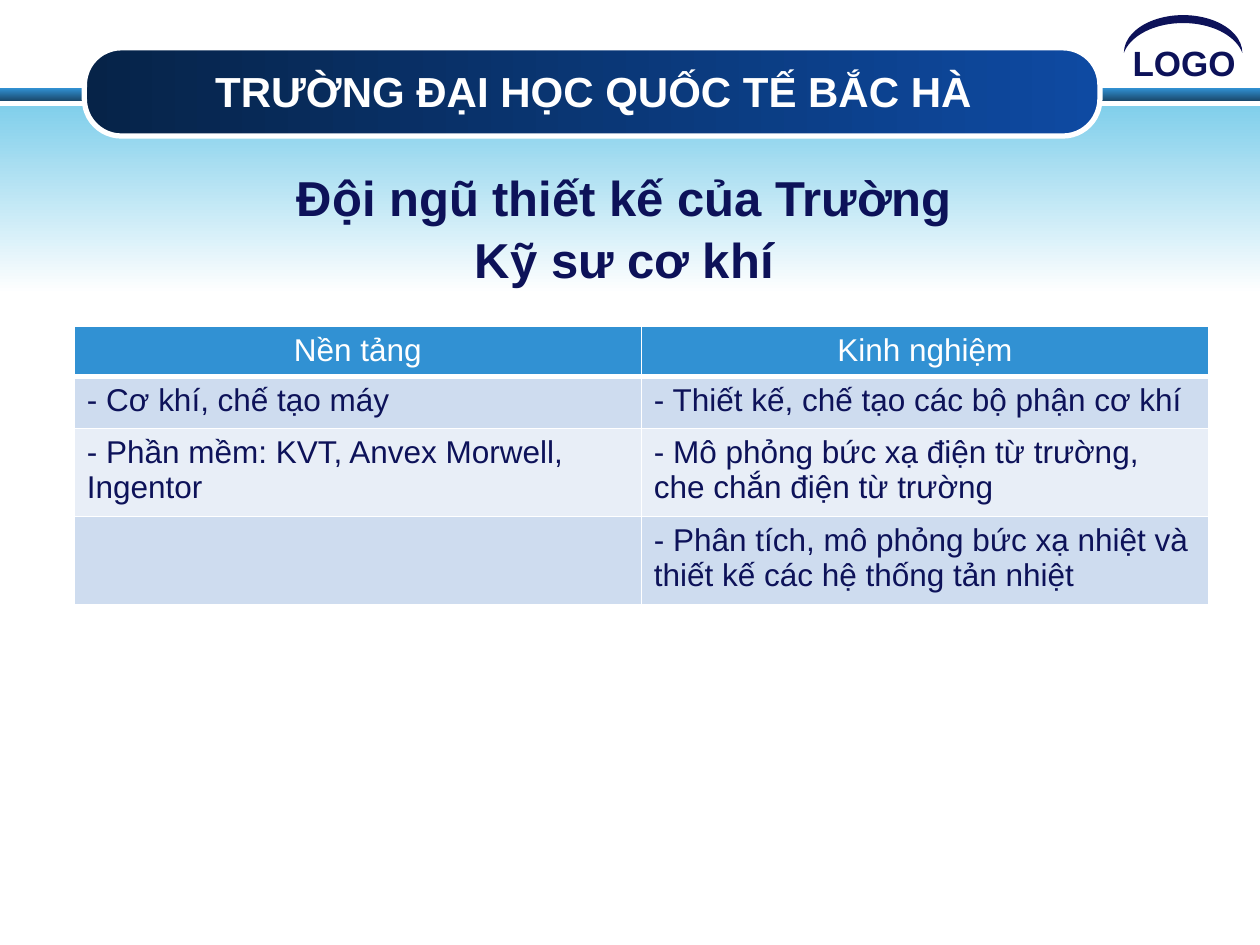
"""Build the slide presenting the mechanical engineers of the university design team."""
from dataclasses import dataclass

from lxml.etree import SubElement
from pptx import Presentation
from pptx.dml.color import RGBColor
from pptx.enum.shapes import MSO_SHAPE as Shape
from pptx.enum.text import MSO_ANCHOR as Anchor, PP_ALIGN as Align
from pptx.oxml.ns import qn
from pptx.util import Inches, Pt

FONT = "Arial"
COLORS = {
    "white": "FFFFFF",
    "navy": "0D1259",
    "blue": "3191D3",
    "bar_end": "1A4A6E",
    "sky": "81CFEB",
    "banner_start": "062348",
    "banner_end": "0E4AA2",
    "band_dark": "CEDCEF",
    "band_light": "E8EEF7",
}
DOWN, ACROSS = 270, 0


@dataclass
class Box:
    left: float
    top: float
    width: float
    height: float

    def lengths(self) -> list:
        return [Inches(side) for side in (self.left, self.top, self.width, self.height)]


@dataclass
class GradientShape:
    kind: Shape
    box: Box
    start: str
    end: str
    angle: int


@dataclass
class TextStyle:
    size: float
    color: str = "navy"
    bold: bool = True
    align: Align = Align.CENTER


BACKDROP = [
    GradientShape(Shape.RECTANGLE, Box(0, 0.7, 10, 0.1), "blue", "bar_end", DOWN),
    GradientShape(Shape.RECTANGLE, Box(0, 0.84, 10, 1.49), "sky", "white", DOWN),
]
BANNER = GradientShape(
    Shape.ROUNDED_RECTANGLE, Box(0.67, 0.38, 8.06, 0.7), "banner_start", "banner_end", ACROSS
)
TABLE_ROWS = [
    ("Nền tảng", "Kinh nghiệm"),
    ("- Cơ khí, chế tạo máy", "- Thiết kế, chế tạo các bộ phận cơ khí"),
    (
        "- Phần mềm: KVT, Anvex Morwell, Ingentor",
        "- Mô phỏng bức xạ điện từ trường, che chắn điện từ trường",
    ),
    ("", "- Phân tích, mô phỏng bức xạ nhiệt và thiết kế các hệ thống tản nhiệt"),
]
ROW_HEIGHTS = [0.4, 0.41, 0.7, 0.7]


def rgb(name: str) -> RGBColor:
    return RGBColor.from_string(COLORS[name])


def write_text(text_frame, text: str, style: TextStyle) -> None:
    paragraph = text_frame.paragraphs[0]
    paragraph.text = text
    paragraph.alignment = style.align
    for run in paragraph.runs:
        run.font.name = FONT
        run.font.size = Pt(style.size)
        run.font.bold = style.bold
        run.font.color.rgb = rgb(style.color)


def add_gradient_shape(slide, item: GradientShape):
    shape = slide.shapes.add_shape(item.kind, *item.box.lengths())
    shape.shadow.inherit = False
    shape.fill.gradient()
    shape.fill.gradient_angle = item.angle
    for stop, color in zip(shape.fill.gradient_stops, (item.start, item.end)):
        stop.color.rgb = rgb(color)
    shape.line.fill.background()
    return shape


def add_banner(slide) -> None:
    banner = add_gradient_shape(slide, BANNER)
    banner.adjustments[0] = 0.42
    banner.line.color.rgb = rgb("white")
    banner.line.width = Pt(3)


def add_text(slide, box: Box, text: str, style: TextStyle):
    text_box = slide.shapes.add_textbox(*box.lengths())
    text_box.text_frame.word_wrap = True
    write_text(text_box.text_frame, text, style)
    return text_box


def add_emblem(slide) -> None:
    add_text(slide, Box(8.89, 0.28, 1.08, 0.43), "LOGO", TextStyle(20, align=Align.LEFT))
    arc = slide.shapes.add_shape(Shape.MOON, *Box(9.24, -0.2, 0.3, 0.94).lengths())
    arc.shadow.inherit = False
    arc.adjustments[0] = 0.21
    arc.rotation = 90
    arc.fill.solid()
    arc.fill.fore_color.rgb = rgb("navy")
    arc.line.fill.background()


def place_title(slide) -> None:
    title = slide.shapes.title
    title.left, title.top, title.width, title.height = Box(0.6, 0.41, 8.22, 0.62).lengths()
    title.text_frame.vertical_anchor = Anchor.MIDDLE
    write_text(title.text_frame, "TRƯỜNG ĐẠI HỌC QUỐC TẾ BẮC HÀ", TextStyle(24, "white"))
    slide.shapes._spTree.append(title._element)


def set_borders(cell, bottom_width: float) -> None:
    properties = cell._tc.get_or_add_tcPr()
    widths = {"a:lnL": 1, "a:lnR": 1, "a:lnT": 1, "a:lnB": bottom_width}
    for position, (tag, width) in enumerate(widths.items()):
        line = SubElement(properties, qn(tag), w=str(Pt(width)))
        fill = SubElement(line, qn("a:solidFill"))
        SubElement(fill, qn("a:srgbClr"), val=COLORS["white"])
        properties.insert(position, line)


def add_skills_table(slide) -> None:
    box = Box(0.59, 2.59, 9, sum(ROW_HEIGHTS))
    table = slide.shapes.add_table(len(TABLE_ROWS), 2, *box.lengths()).table
    header_style = TextStyle(18, "white", False)
    body_style = TextStyle(18, "navy", False, Align.LEFT)
    for row_index, (texts, height) in enumerate(zip(TABLE_ROWS, ROW_HEIGHTS)):
        is_header = row_index == 0
        band = "band_dark" if row_index % 2 else "band_light"
        table.rows[row_index].height = Inches(height)
        for column_index, text in enumerate(texts):
            cell = table.cell(row_index, column_index)
            cell.fill.solid()
            cell.fill.fore_color.rgb = rgb("blue" if is_header else band)
            set_borders(cell, 3 if is_header else 1)
            write_text(cell.text_frame, text, header_style if is_header else body_style)


def main() -> None:
    presentation = Presentation()
    presentation.slide_width, presentation.slide_height = Inches(10), Inches(7.5)
    slide = presentation.slides.add_slide(presentation.slide_layouts[5])
    for item in BACKDROP:
        add_gradient_shape(slide, item)
    add_banner(slide)
    add_emblem(slide)
    place_title(slide)
    subtitle = add_text(
        slide,
        Box(0.6, 1.26, 8.71, 1.04),
        "Đội ngũ thiết kế của Trường\vKỹ sư cơ khí",
        TextStyle(28),
    )
    subtitle.text_frame.paragraphs[0].line_spacing = 1.05
    add_skills_table(slide)
    presentation.save("out.pptx")


if __name__ == "__main__":
    main()
